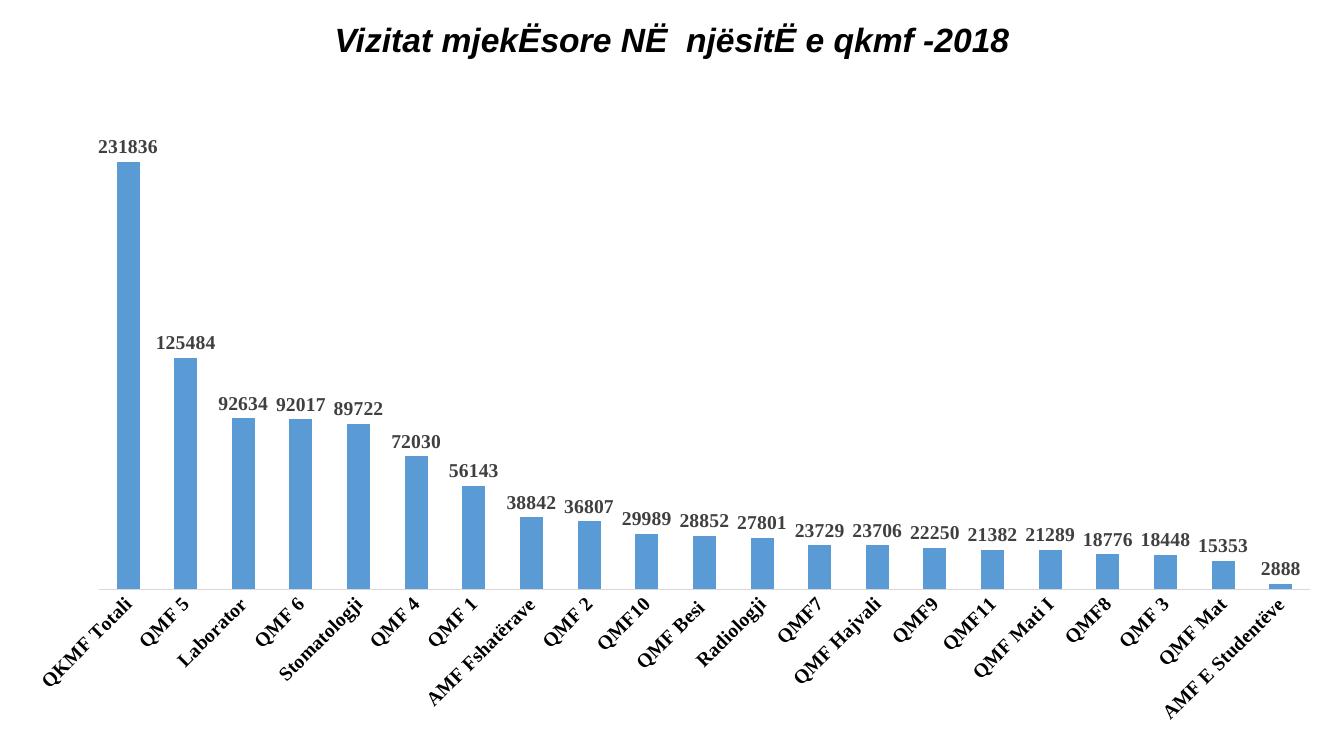
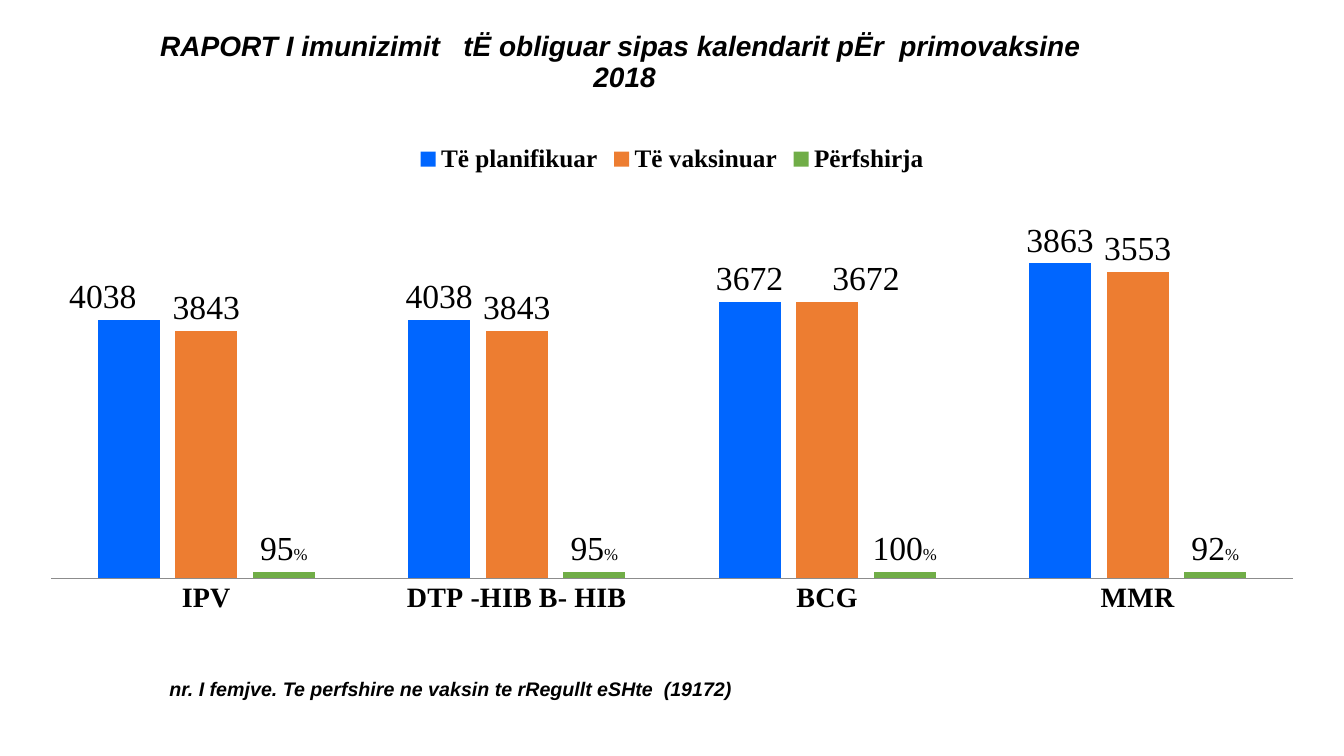
from lxml import etree
from pptx import Presentation
from pptx.chart.data import CategoryChartData
from pptx.dml.color import RGBColor
from pptx.enum.chart import XL_CHART_TYPE, XL_LABEL_POSITION, XL_LEGEND_POSITION, XL_TICK_MARK
from pptx.enum.text import MSO_ANCHOR, PP_ALIGN
from pptx.oxml.ns import qn
from pptx.util import Inches, Pt

COLUMN = XL_CHART_TYPE.COLUMN_CLUSTERED
OUTSIDE = XL_LABEL_POSITION.OUTSIDE_END
TOP = XL_LEGEND_POSITION.TOP
NO_TICK = XL_TICK_MARK.NONE
MIDDLE = MSO_ANCHOR.MIDDLE
CENTER = PP_ALIGN.CENTER

COLORS = {
    "black": "000000",
    "dark": "404040",
    "grey": "8C8C8C",
    "pale": "D9D9D9",
    "sky": "5B9BD5",
    "blue": "0066FF",
    "orange": "ED7D31",
    "green": "70AD47",
}
TITLE = {"name": "Arial", "bold": True, "italic": True}
BASE = {"name": "Calibri", "size": Pt(10)}
SERIF = {"name": "Times New Roman", "bold": True}
LIGHT = {"name": "Times New Roman", "bold": False}


def style(font, look, color="black"):
    for key, value in look.items():
        setattr(font, key, value)
    font.color.rgb = RGBColor.from_string(COLORS[color])


def place(spot):
    layout = etree.Element(qn("c:layout"))
    manual = etree.SubElement(layout, qn("c:manualLayout"))
    for key, value in spot.items():
        etree.SubElement(manual, qn("c:" + key)).set("val", str(value))
    return layout


PAGES = [
    {
        "texts": [
            ("Vizitat mjekËsore NË  njësitË e qkmf -2018", (0, 0.18, 13.33, 0.46), 24),
        ],
        "box": (0.11, 1.15, 13.05, 6.17),
        "plot": (0.067, 0.02, 0.92, 0.741),
        "max": 250000,
        "axis": "pale",
        "turn": "-2700000",
        "sizes": (14, 14),
        "ink": "dark",
        "cats": [
            "QKMF Totali", "QMF 5", "Laborator", "QMF 6", "Stomatologji", "QMF 4", "QMF 1",
            "AMF Fshatërave", "QMF 2", "QMF10", "QMF Besi ", "Radiologji", "QMF7",
            "QMF Hajvali", "QMF9", "QMF11", "QMF Mati I", "QMF8", "QMF 3", "QMF Mat",
            "AMF E Studentëve",
        ],
        "series": [
            ("Series 1", "sky", [
                231836, 125484, 92634, 92017, 89722, 72030, 56143, 38842, 36807, 29989, 28852,
                27801, 23729, 23706, 22250, 21382, 21289, 18776, 18448, 15353, 2888,
            ], [], {}),
        ],
    },
    {
        "texts": [
            ("RAPORT I imunizimit   tË obliguar sipas kalendarit pËr  primovaksine \v2018",
             (0.01, 0, 12.37, 1.25), 20),
            ("nr. I femjve. Te perfshire ne vaksin te rRegullt eSHte  (19172) ",
             (0, 6.63, 9, 0.43), 14),
        ],
        "box": (0.25, 1.32, 12.83, 4.87),
        "plot": (0.02, 0.11, 0.96, 0.797),
        "max": 6000,
        "axis": "grey",
        "turn": "0",
        "sizes": (20, 24),
        "ink": "black",
        "cats": ["IPV", "DTP -HIB B- HIB", "BCG", "MMR"],
        "series": [
            ("Të planifikuar", "blue", [3961, 3961, 4238, 4830],
             ["4038", "4038", "3672", "3863"], {0: -0.02}),
            ("Të vaksinuar", "orange", [3790, 3790, 4238, 4704],
             ["3843", "3843", "3672", "3553"], {2: 0.03}),
            ("Përfshirja", "green", [96, 96, 100, 97],
             ["95%", "95%", "100%", "92%"], {}),
        ],
    },
]

deck = Presentation()
deck.slide_width, deck.slide_height = Inches(13.33), Inches(7.5)

for page in PAGES:
    slide = deck.slides.add_slide(deck.slide_layouts[6])

    for words, box, size in page["texts"]:
        frame = slide.shapes.add_textbox(*map(Inches, box)).text_frame
        frame.word_wrap = True
        frame.vertical_anchor = MIDDLE
        para = frame.paragraphs[0]
        para.text = words
        para.alignment = CENTER
        para.line_spacing = 0.9
        for run in para.runs:
            style(run.font, {**TITLE, "size": Pt(size)})

    data = CategoryChartData(number_format="0")
    data.categories = page["cats"]
    for name, color, values, marks, shifts in page["series"]:
        data.add_series(name, values)
    chart = slide.shapes.add_chart(COLUMN, *map(Inches, page["box"]), data).chart
    chart.has_title = False
    style(chart.font, BASE)
    chart.has_legend = len(page["series"]) > 1
    if chart.has_legend:
        chart.legend.position = TOP
        chart.legend.include_in_layout = False
        style(chart.legend.font, {**SERIF, "size": Pt(18)})

    area = chart.element.find(".//" + qn("c:plotArea"))
    for old in area.findall(qn("c:layout")):
        area.remove(old)
    spot = {"layoutTarget": "inner", "xMode": "edge", "yMode": "edge"}
    area.insert(0, place({**spot, **dict(zip("xywh", page["plot"]))}))

    cat_size, mark_size = map(Pt, page["sizes"])
    cats = chart.category_axis
    cats.major_tick_mark = NO_TICK
    cats.has_major_gridlines = False
    cats.format.line.width = Pt(0.75)
    cats.format.line.color.rgb = RGBColor.from_string(COLORS[page["axis"]])
    style(cats.tick_labels.font, {**SERIF, "size": cat_size})
    area.find(qn("c:catAx")).find(".//" + qn("a:bodyPr")).set("rot", page["turn"])

    scale = chart.value_axis
    scale.visible = False
    scale.has_major_gridlines = False
    scale.minimum_scale, scale.maximum_scale = 0, page["max"]

    plot = chart.plots[0]
    plot.vary_by_categories = False
    plot.gap_width, plot.overlap = 150, -25
    for bars, (name, color, values, marks, shifts) in zip(plot.series, page["series"]):
        bars.format.fill.solid()
        bars.format.fill.fore_color.rgb = RGBColor.from_string(COLORS[color])
        labels = bars.data_labels
        labels.show_value = True
        labels.number_format, labels.number_format_is_linked = "0", False
        labels.position = OUTSIDE
        style(labels.font, {**SERIF, "size": mark_size}, page["ink"])
        for index, mark in enumerate(marks):
            label = bars.points[index].data_label
            para = label.text_frame.paragraphs[0]
            digits = mark.rstrip("%")
            for part, size in ((digits, mark_size), (mark[len(digits):], Pt(12))):
                if part:
                    run = para.add_run()
                    run.text = part
                    style(run.font, {**LIGHT, "size": size})
            label.position = OUTSIDE
            if index in shifts:
                rich = para._p.getparent().getparent()
                rich.addprevious(place({"x": shifts[index], "y": 0}))

deck.save("out.pptx")
